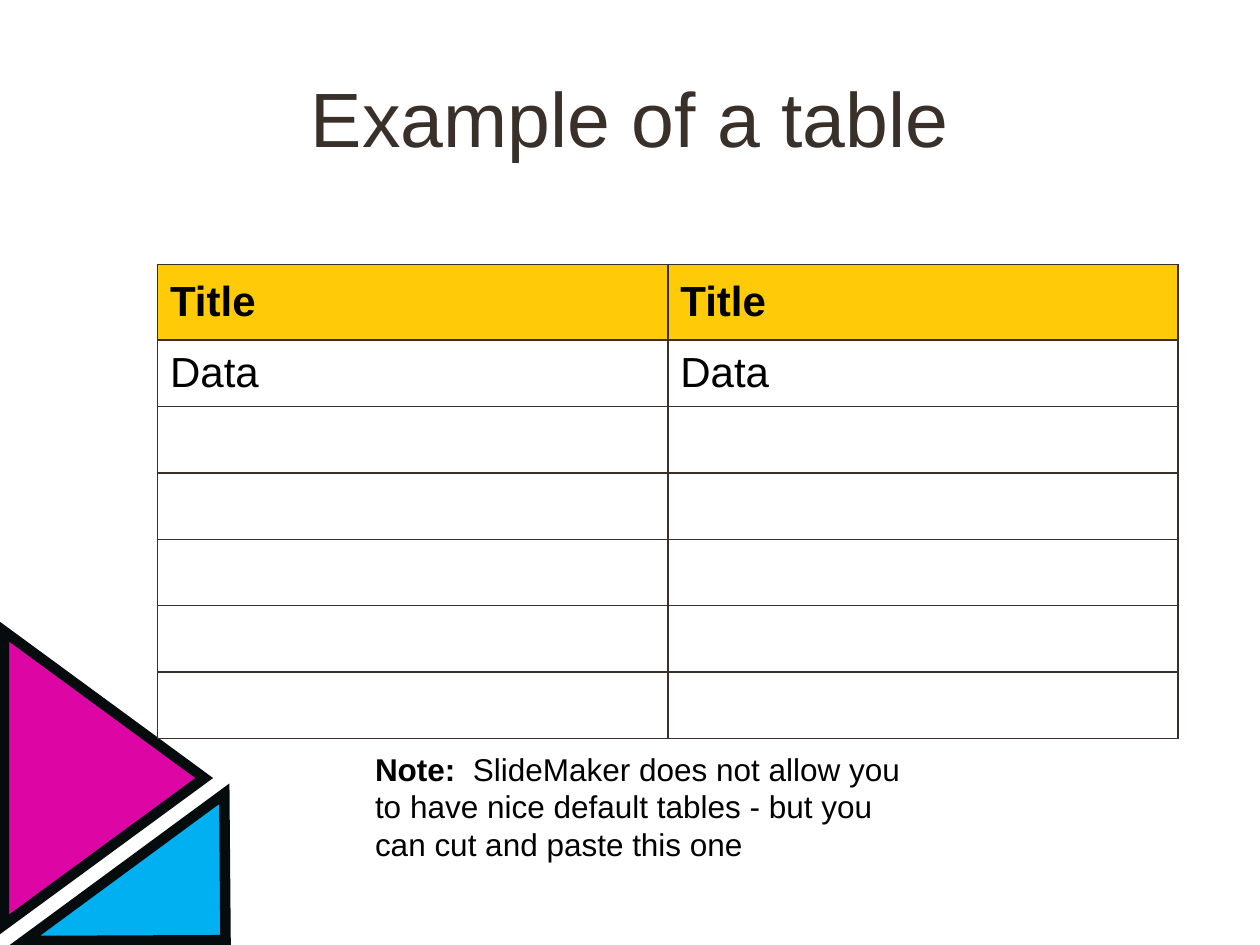
from dataclasses import dataclass

from lxml.etree import SubElement
from pptx import Presentation
from pptx.dml.color import RGBColor as RGB
from pptx.enum.shapes import MSO_SHAPE as SHAPE
from pptx.enum.text import MSO_ANCHOR as ANCHOR, MSO_AUTO_SIZE as AUTO, PP_ALIGN as ALIGN
from pptx.oxml import parse_xml
from pptx.oxml.ns import nsdecls, qn
from pptx.util import Pt


@dataclass(frozen=True)
class Theme:
    font: str = "Arial"
    title_size: float = 44
    table_size: float = 24
    note_size: float = 18
    brown: str = "39302A"
    black: str = "000000"
    outline: str = "060C0E"
    yellow: str = "FFCA08"
    pink: str = "DD05A4"
    blue: str = "00B0F0"


THEME = Theme()
ROWS = [("Title", "Title"), ("Data", "Data")] + [("", "")] * 5


def set_font(p, size, color, bold=None):
    p.font.name = THEME.font
    p.font.size = Pt(size)
    p.font.color.rgb = RGB.from_string(color)
    p.font.bold = bold


def style_triangle(sp, color):
    sp.shadow.inherit = False
    sp.fill.solid()
    sp.fill.fore_color.rgb = RGB.from_string(color)
    sp.line.color.rgb = RGB.from_string(THEME.outline)
    sp.line.width = Pt(6)
    # Sharp corners
    SubElement(sp.line._get_or_add_ln(), qn("a:miter"), lim="800000")


def add_corner(s, left, top, width, height):
    right, bottom = left + width, top + height

    # Blue triangle, right angle in the lower right
    blue_left, blue_top = left + 11.5, bottom - 84.2
    builder = s.shapes.build_freeform(Pt(right), Pt(bottom - 0.5), scale=1.0)
    builder.add_line_segments(
        [(Pt(blue_left), Pt(bottom)), (Pt(right - 0.7), Pt(blue_top))], close=True)
    style_triangle(builder.convert_to_shape(), THEME.blue)

    # Pink triangle, turned to point right
    base, depth = 167.8, 114.5
    sp = s.shapes.add_shape(
        SHAPE.ISOSCELES_TRIANGLE, Pt(left + (depth - base) / 2),
        Pt(top + (base - depth) / 2), Pt(base), Pt(depth))
    sp.rotation = 90
    style_triangle(sp, THEME.pink)


def add_title(s, left, top, width, height, text):
    sp = s.shapes.title
    sp.left, sp.top, sp.width, sp.height = map(Pt, (left, top, width, height))
    tf = sp.text_frame
    tf.text = text
    tf.vertical_anchor = ANCHOR.MIDDLE
    p = tf.paragraphs[0]
    p.alignment = ALIGN.CENTER
    set_font(p, THEME.title_size, THEME.brown)


def add_borders(cell):
    tc_pr = cell._tc.get_or_add_tcPr()
    for i, side in enumerate("LRTB"):
        tc_pr.insert(i, parse_xml(
            f'<a:ln{side} {nsdecls("a")} w="{Pt(1)}"><a:solidFill>'
            f'<a:srgbClr val="{THEME.brown}"/></a:solidFill></a:ln{side}>'))


def add_data_table(s, left, top, width, height, rows):
    frame = s.shapes.add_table(
        len(rows), len(rows[0]), Pt(left), Pt(top), Pt(width), Pt(height))
    table = frame.table
    table.horz_banding = False
    table.first_row = False

    # Taller header, the other rows share the rest
    header = 43.2
    for i, row in enumerate(table.rows):
        row.height = Pt(header if i == 0 else (height - header) / (len(rows) - 1))

    for i, texts in enumerate(rows):
        for j, text in enumerate(texts):
            cell = table.cell(i, j)
            cell.text = text
            cell.vertical_anchor = ANCHOR.MIDDLE
            set_font(cell.text_frame.paragraphs[0], THEME.table_size, THEME.black, i == 0)
            if i == 0:
                cell.fill.solid()
                cell.fill.fore_color.rgb = RGB.from_string(THEME.yellow)
            else:
                cell.fill.background()
            add_borders(cell)


def add_note(s, left, top, width, height, label, text):
    tf = s.shapes.add_textbox(Pt(left), Pt(top), Pt(width), Pt(height)).text_frame
    tf.word_wrap = True
    tf.auto_size = AUTO.SHAPE_TO_FIT_TEXT
    p = tf.paragraphs[0]
    set_font(p, THEME.note_size, THEME.black)
    for part, bold in ((label, True), (text, False)):
        r = p.add_run()
        r.text = part
        r.font.bold = bold


def main():
    prs = Presentation()
    prs.slide_width, prs.slide_height = Pt(720), Pt(540)
    s = prs.slides.add_slide(prs.slide_layouts[5])
    add_corner(s, 2.2, 360.7, 126.7, 177.1)
    add_title(s, 36, 21.6, 648, 90, "Example of a table")
    add_data_table(s, 90, 151.2, 583.2, 270.9, ROWS)
    add_note(s, 207.2, 424.8, 323.3, 72, "Note:  ",
             "SlideMaker does not allow you to have nice default tables"
             " - but you can cut and paste this one")
    prs.save("out.pptx")


if __name__ == "__main__":
    main()
